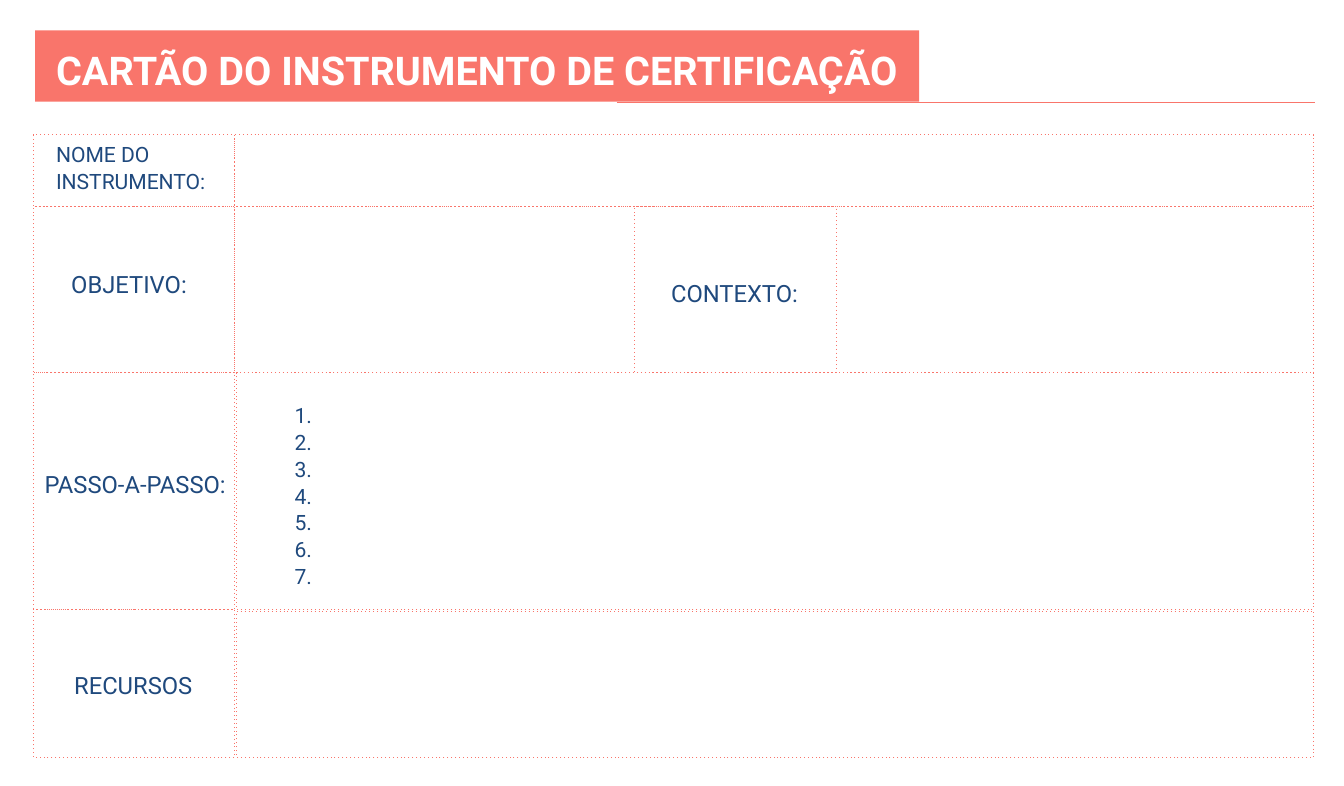
from dataclasses import dataclass

from lxml import etree
from pptx import Presentation
from pptx import util as u
from pptx.dml.color import RGBColor
from pptx.enum import shapes, text
from pptx.oxml.ns import qn


@dataclass(frozen=True)
class Theme:
    font: str = "Roboto"
    coral: RGBColor = RGBColor(0xF9, 0x75, 0x6B)
    navy: RGBColor = RGBColor(0x1F, 0x49, 0x7D)
    white: RGBColor = RGBColor(0xFF, 0xFF, 0xFF)
    title_size: int = 30
    label_size: int = 18
    small_size: int = 16
    line_width: float = 0.75
    line_spacing: float = 1.06


# Grid edges, in percent of the slide's width and height
COLUMNS = (2.48, 17.47, 47.24, 62.23, 97.74)
ROWS = (17.17, 26.24, 47.4, 77.51, 96.37)


class Card:
    """Draws on one slide; lengths are percentages of the slide's size."""

    def __init__(self, presentation, theme):
        self.theme = theme
        self.width = presentation.slide_width
        self.height = presentation.slide_height
        self.slide = presentation.slides.add_slide(presentation.slide_layouts[6])

    def x(self, share):
        return u.Emu(round(self.width * share / 100))

    def y(self, share):
        return u.Emu(round(self.height * share / 100))

    def box(self, left, top, width, height):
        return self.x(left), self.y(top), self.x(width), self.y(height)

    def rectangle(self, left, top, width, height):
        shape = self.slide.shapes.add_shape(
            shapes.MSO_SHAPE.RECTANGLE, *self.box(left, top, width, height))
        shape.shadow.inherit = False
        return shape

    def bar(self, left, top, width, height):
        shape = self.rectangle(left, top, width, height)
        shape.fill.solid()
        shape.fill.fore_color.rgb = self.theme.coral
        shape.line.fill.background()

    def cell(self, row, first, last, shift_x=0, shift_y=0):
        """Outline grid columns first to last; shifts move the left and top edges."""
        left, top = COLUMNS[first] + shift_x, ROWS[row] + shift_y
        shape = self.rectangle(left, top, COLUMNS[last + 1] - left, ROWS[row + 1] - top)
        shape.fill.background()
        self.stroke(shape.line)
        outline = shape._element.spPr.find(qn("a:ln"))
        etree.SubElement(outline, qn("a:prstDash")).set("val", "dot")

    def stroke(self, line):
        line.color.rgb = self.theme.coral
        line.width = u.Pt(self.theme.line_width)

    def rule(self, start, end, height):
        connector = self.slide.shapes.add_connector(
            shapes.MSO_CONNECTOR.STRAIGHT,
            self.x(start), self.y(height), self.x(end), self.y(height))
        self.stroke(connector.line)
        etree.SubElement(connector._element.spPr, qn("a:effectLst"))

    def text_block(self, lines, place, size, color, inset=0.15, indent=0.28,
                   spacing=None, bold=False):
        shape = self.slide.shapes.add_textbox(*self.box(*place))
        frame = shape.text_frame
        frame.word_wrap = True
        frame.vertical_anchor = text.MSO_ANCHOR.TOP
        frame.margin_left = frame.margin_right = frame.margin_bottom = 0
        frame.margin_top = u.Inches(inset)
        for index, words in enumerate(lines):
            paragraph = frame.add_paragraph() if index else frame.paragraphs[0]
            paragraph.line_spacing = spacing
            properties = paragraph._p.get_or_add_pPr()
            properties.set("marL", str(u.Inches(indent)))
            properties.set("indent", "0")
            run = paragraph.add_run()
            run.text = words
            run.font.name = self.theme.font
            run.font.size = u.Pt(size)
            run.font.bold = bold
            run.font.color.rgb = color

    def title(self, words, *place):
        self.text_block([words], place, self.theme.title_size, self.theme.white,
                        inset=0.01, indent=0.01, bold=True)

    def label(self, lines, left, top, size, width=20.44):
        self.text_block(lines, (left, top, width, 9.07), size, self.theme.navy,
                        spacing=self.theme.line_spacing)


def main():
    presentation = Presentation()
    presentation.slide_width = u.Inches(14.14)
    presentation.slide_height = u.Inches(8.27)
    theme = Theme()
    card = Card(presentation, theme)

    card.bar(2.62, 3.87, 65.77, 9.07)
    card.title("CARTÃO DO INSTRUMENTO DE CERTIFICAÇÃO", 4.1, 5.68, 72.07, 8.34)
    card.rule(45.9, 97.81, 13.06)

    for row, (shift_x, shift_y) in enumerate([(0, 0), (0, 0), (0.14, 0), (0.14, 0.24)]):
        card.cell(row, 0, 0)
        card.cell(row, 1, 3, shift_x, shift_y)
    card.cell(1, 2, 2)

    card.label(["NOME DO INSTRUMENTO:"], 2.19, 15.96, theme.small_size, width=16.05)
    for words, left, top in (
        ("OBJETIVO:", 3.32, 32.29),
        ("CONTEXTO:", 47.95, 33.37),
        ("PASSO-A-PASSO:", 1.34, 57.68),
        ("RECURSOS", 3.54, 83.31),
    ):
        card.label([words], left, top, theme.label_size)
    card.label([f"{step}." for step in range(1, 8)], 19.94, 49.21, theme.small_size)

    presentation.save("out.pptx")


if __name__ == "__main__":
    main()
